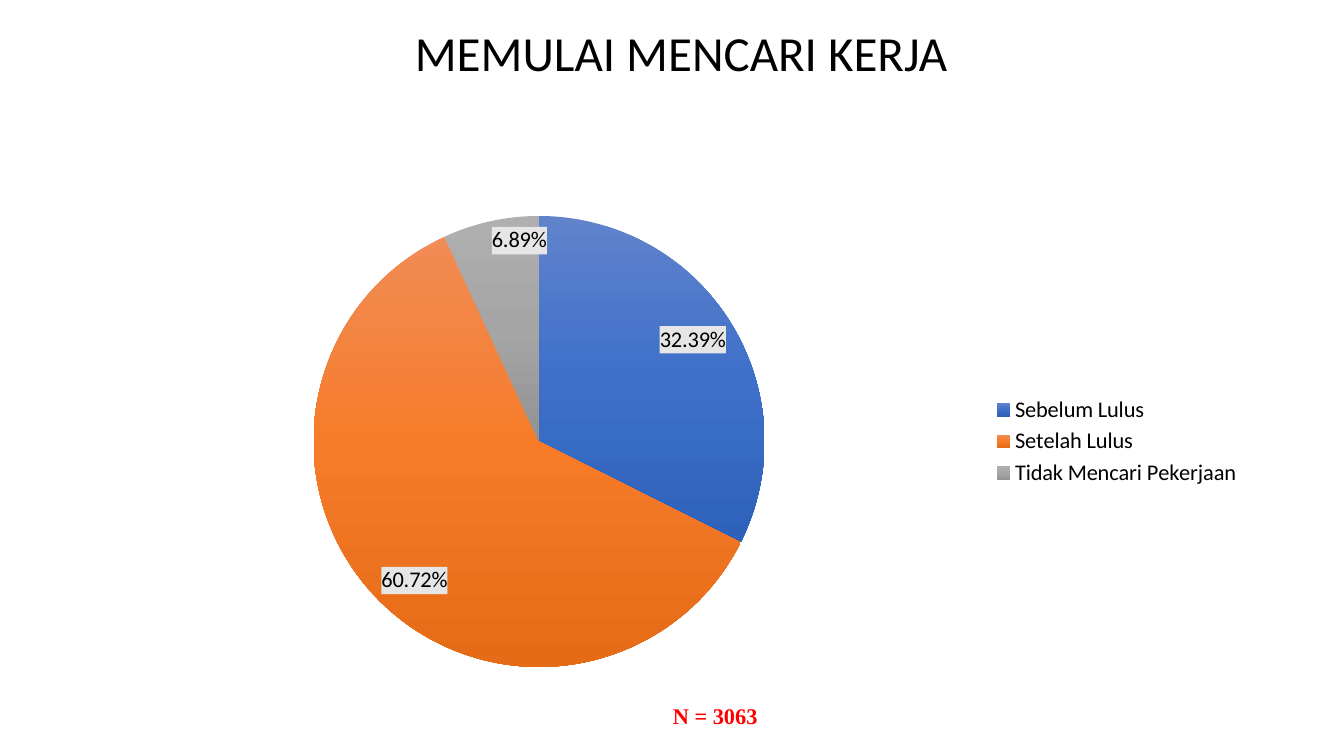
"""Build the slide on when graduates began looking for work."""
from copy import deepcopy

from pptx import Presentation
from pptx.chart.data import CategoryChartData
from pptx.dml.color import RGBColor
from pptx.enum.chart import XL_CHART_TYPE, XL_LABEL_POSITION, XL_LEGEND_POSITION
from pptx.enum.text import MSO_ANCHOR, PP_ALIGN
from pptx.oxml import parse_xml
from pptx.oxml.ns import nsdecls
from pptx.util import Pt

TITLE = "MEMULAI MENCARI KERJA"
COUNT = "N = 3063"
SHARES = [
    ("Sebelum Lulus", 0.3239, ("6083CB", "3E70CA", "2E61BA")),
    ("Setelah Lulus", 0.6072, ("F18C55", "F67B28", "E56B17")),
    ("Tidak Mencari Pekerjaan", 0.0689, ("AFAFAF", "A5A5A5", "929292")),
]
BLACK = RGBColor(0, 0, 0)
RED = RGBColor(255, 0, 0)
LABEL = "E7E6E6"
PIE = {"x": 0.19, "y": 0.03, "w": 0.39, "h": 0.94}


def style(font, size, name="Calibri", color=BLACK):
    font.size = Pt(size)
    font.name = name
    font.color.rgb = color


def shade(point, colors):
    fill = point.format.fill
    fill.gradient()
    fill.gradient_angle = 270
    stops = fill._xPr.xpath(".//a:gsLst")[0]
    first = deepcopy(stops[0])
    for stop in list(stops):
        stops.remove(stop)
    for _ in colors:
        stops.append(deepcopy(first))
    for i, (stop, color) in enumerate(zip(fill.gradient_stops, colors)):
        stop.position = i / (len(colors) - 1)
        stop.color.rgb = RGBColor.from_string(color)
    point.format.line.fill.background()


def add_title(slide):
    box = slide.shapes.add_textbox(Pt(39.6), Pt(7.2), Pt(894.24), Pt(64.8))
    frame = box.text_frame
    frame.word_wrap = True
    frame.vertical_anchor = MSO_ANCHOR.MIDDLE
    line = frame.paragraphs[0]
    line.text = TITLE
    line.alignment = PP_ALIGN.CENTER
    line.line_spacing = 0.9
    style(line.font, 35)


def add_pie(slide):
    data = CategoryChartData(number_format="0.00%")
    data.categories = [name for name, _, _ in SHARES]
    data.add_series("Series 1", [share for _, share, _ in SHARES])
    chart = slide.shapes.add_chart(
        XL_CHART_TYPE.PIE, Pt(66.24), Pt(144), Pt(828), Pt(342.72), data
    ).chart
    chart.has_title = False
    style(chart.font, 10)
    chart.has_legend = True
    chart.legend.position = XL_LEGEND_POSITION.RIGHT
    chart.legend.include_in_layout = False
    style(chart.legend.font, 16)

    plot = chart.plots[0]
    series = plot.series[0]
    for i, (_, _, colors) in enumerate(SHARES):
        shade(series.points[i], colors)

    labels = series.data_labels
    labels.show_value = True
    labels.show_percentage = False
    labels.number_format = "0.00%"
    labels.number_format_is_linked = False
    labels.position = XL_LABEL_POSITION.INSIDE_END
    style(labels.font, 16)
    back = parse_xml(
        f'<c:spPr {nsdecls("c", "a")}><a:solidFill><a:srgbClr val="{LABEL}"/>'
        "</a:solidFill></c:spPr>"
    )
    labels._element.xpath("c:txPr")[0].addprevious(back)

    area = chart._chartSpace.xpath(".//c:plotArea")[0]
    for old in area.xpath("c:layout"):
        area.remove(old)
    modes = "".join(f'<c:{k}Mode val="edge"/>' for k in "xy")
    sides = "".join(f'<c:{k} val="{v}"/>' for k, v in PIE.items())
    area.insert(0, parse_xml(
        f'<c:layout {nsdecls("c")}><c:manualLayout><c:layoutTarget val="inner"/>'
        f"{modes}{sides}</c:manualLayout></c:layout>"
    ))


def add_count(slide):
    table = slide.shapes.add_table(
        1, 1, Pt(462.96), Pt(499.68), Pt(95.76), Pt(23.76)
    ).table
    table.first_row = False
    table.horz_banding = False
    cell = table.cell(0, 0)
    cell.fill.background()
    line = cell.text_frame.paragraphs[0]
    line.text = COUNT
    line.alignment = PP_ALIGN.CENTER
    style(line.font, 16, "Times New Roman", RED)
    line.font.bold = True


def main():
    deck = Presentation()
    deck.slide_width, deck.slide_height = Pt(960), Pt(540)
    slide = deck.slides.add_slide(deck.slide_layouts[6])
    add_pie(slide)
    add_title(slide)
    add_count(slide)
    deck.save("out.pptx")


if __name__ == "__main__":
    main()
